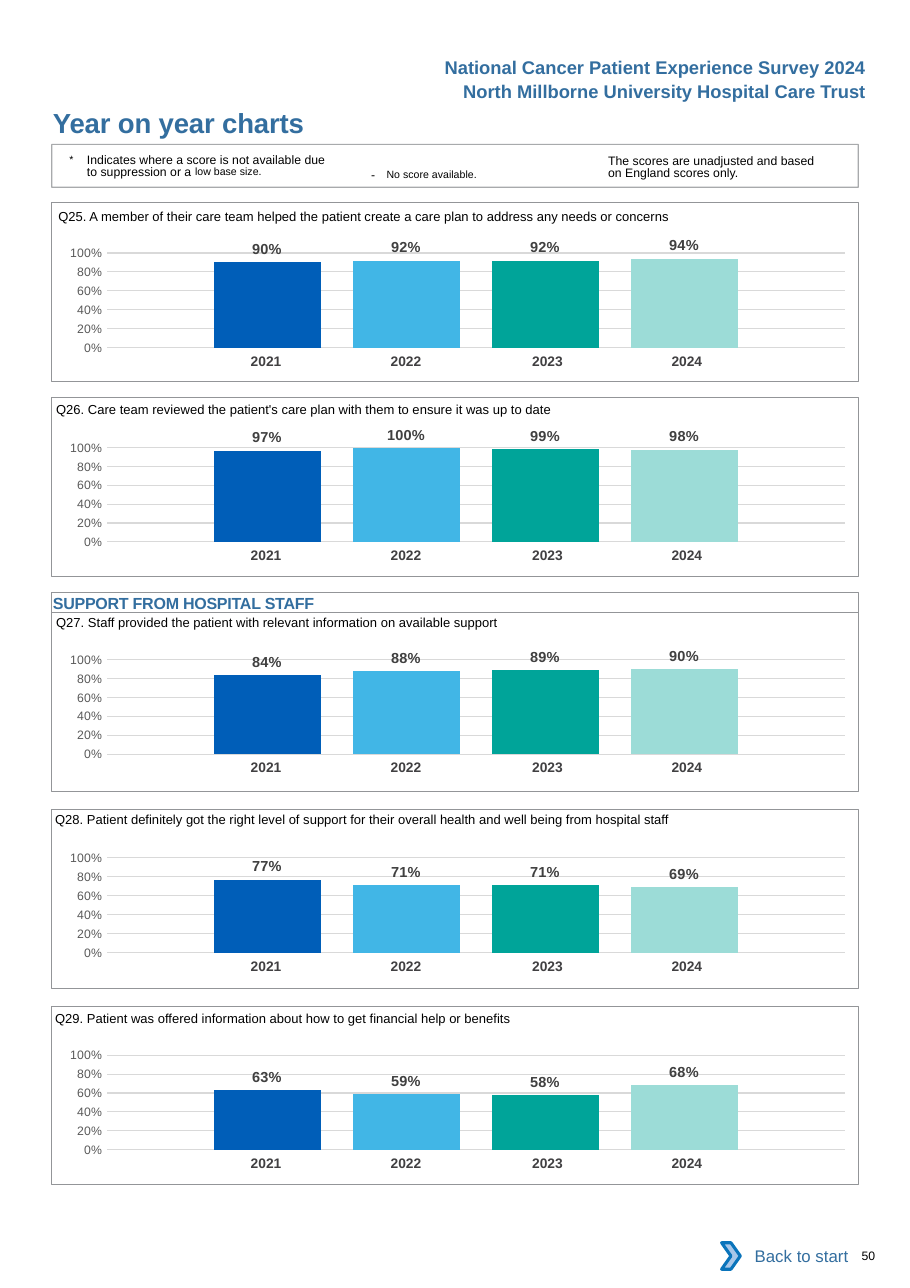
from dataclasses import dataclass

from lxml.etree import SubElement
from pptx import Presentation
from pptx.chart.data import CategoryChartData
from pptx.dml.color import RGBColor
from pptx.enum.chart import XL_CHART_TYPE, XL_LABEL_POSITION, XL_TICK_MARK
from pptx.enum.shapes import MSO_SHAPE
from pptx.enum.text import MSO_ANCHOR, PP_ALIGN
from pptx.oxml import parse_xml
from pptx.oxml.ns import nsdecls, qn
from pptx.util import Inches, Pt

COLORS = {
    "heading": "336E9F", "text": "000000", "frame": "939598", "year": "414042",
    "axis": "595959", "grid": "D9D9D9", "label": "404040", "white": "FFFFFF",
    "chevron": "A8C7E9", "chevron_line": "0A74BB",
}
YEARS = {"2021": "005EB8", "2022": "41B6E6", "2023": "00A499", "2024": "9CDCD7"}
YEAR_WIDTHS = (1.27, 1.27, 1.34, 1.27)
YEAR_RIGHT_MARGINS = (0, 0, 0.04, 0.12)
PLOT_AREA = {"x": 0.079, "y": 0.145, "w": 0.915, "h": 0.666}
NO_TABLE_STYLE = "{2D5ABB26-0587-4C30-8999-92F81FD0307C}"
LEFT, WIDTH = 0.47, 7.32
PANEL_HEIGHT = 1.62


@dataclass
class Panel:
    question: str
    top: float
    question_left: float
    question_top: float
    chart_top: float
    scores: tuple


@dataclass
class Run:
    text: str
    size: float = 8
    baseline: int = 0


PANELS = [
    Panel("Q25. A member of their care team helped the patient create a care plan to address any needs or concerns",
          1.84, 0.53, 1.8, 2.11, (0.9, 0.92, 0.92, 0.94)),
    Panel("Q26. Care team reviewed the patient's care plan with them to ensure it was up to date",
          3.61, 0.51, 3.55, 3.87, (0.97, 1, 0.99, 0.98)),
    Panel("Q27. Staff provided the patient with relevant information on available support",
          5.56, 0.51, 5.49, 5.8, (0.84, 0.88, 0.89, 0.9)),
    Panel("Q28. Patient definitely got the right level of support for their overall health and well being from hospital staff",
          7.35, 0.5, 7.28, 7.6, (0.77, 0.71, 0.71, 0.69)),
    Panel("Q29. Patient was offered information about how to get financial help or benefits",
          9.13, 0.5, 9.08, 9.39, (0.63, 0.59, 0.58, 0.68)),
]


def color(name: str) -> RGBColor:
    return RGBColor.from_string(COLORS.get(name, name))


def style_font(font, size: float, fill: str, bold: bool = False) -> None:
    font.name, font.size, font.bold = "Arial", Pt(size), bold
    font.color.rgb = color(fill)


def write(sp, runs, size=8.5, fill="text", bold=False, align=PP_ALIGN.LEFT,
          margins=(0, 0, 0, 0), spacing=0, hanging=0, anchor=MSO_ANCHOR.TOP):
    tf = sp.text_frame
    tf.word_wrap, tf.vertical_anchor = True, anchor
    tf.margin_left, tf.margin_top, tf.margin_right, tf.margin_bottom = map(Inches, margins)
    p = tf.paragraphs[0]
    p.alignment = align
    style_font(p.font, size, fill, bold)
    if hanging:
        pPr = p._p.get_or_add_pPr()
        pPr.set("marL", str(Inches(hanging)))
        pPr.set("indent", str(-Inches(hanging)))
    for run in [Run(runs, size)] if isinstance(runs, str) else runs:
        r = p.add_run()
        r.text = run.text
        if run.size != size:
            r.font.size = Pt(run.size)
        if run.baseline:
            r.font._element.set("baseline", str(run.baseline * 1000))
        if spacing:
            r.font._element.set("spc", str(spacing))
    return p


def add_text(s, box: tuple, runs, **style):
    return write(s.shapes.add_textbox(*map(Inches, box)), runs, **style)


def add_box(s, box: tuple, line="", width=0.5, fill="", shape=MSO_SHAPE.RECTANGLE):
    sp = s.shapes.add_shape(shape, *map(Inches, box))
    sp.shadow.inherit = False
    if fill:
        sp.fill.solid()
        sp.fill.fore_color.rgb = color(fill)
    else:
        sp.fill.background()
    if line:
        sp.line.color.rgb = color(line)
        sp.line.width = Pt(width)
    else:
        sp.line.fill.background()
    return sp


def add_score_chart(s, panel: Panel) -> None:
    data = CategoryChartData(number_format="0%")
    data.categories = ["1"]
    for i, score in enumerate(panel.scores, 1):
        data.add_series(f"Series {i}", [score])
    box = map(Inches, (0.39, panel.chart_top, WIDTH, 1.29))
    chart = s.shapes.add_chart(XL_CHART_TYPE.COLUMN_CLUSTERED, *box, data).chart
    chart.has_legend = chart.has_title = False
    chart.font.name, chart.font.size = "Calibri", Pt(10)
    chart.category_axis.visible = False
    axis = chart.value_axis
    axis.minimum_scale, axis.maximum_scale, axis.major_unit = 0, 1, 0.2
    axis.major_tick_mark = axis.minor_tick_mark = XL_TICK_MARK.NONE
    axis.format.line.fill.background()
    axis.major_gridlines.format.line.color.rgb = color("grid")
    axis.major_gridlines.format.line.width = Pt(0.75)
    axis.tick_labels.number_format = "0%"
    axis.tick_labels.number_format_is_linked = False
    style_font(axis.tick_labels.font, 8, "axis")
    plot = chart.plots[0]
    plot.vary_by_categories, plot.gap_width, plot.overlap = False, 200, -30
    for series, fill in zip(plot.series, YEARS.values()):
        series.format.fill.solid()
        series.format.fill.fore_color.rgb = color(fill)
        labels = series.data_labels
        labels.show_value, labels.position = True, XL_LABEL_POSITION.OUTSIDE_END
        labels.number_format, labels.number_format_is_linked = "0%", False
        style_font(labels.font, 9.5, "label", True)
    area = chart._chartSpace.xpath("c:chart/c:plotArea")[0]
    for layout in area.findall(qn("c:layout")):
        area.remove(layout)
    modes = '<c:layoutTarget val="inner"/><c:xMode val="edge"/><c:yMode val="edge"/>'
    sizes = "".join(f'<c:{k} val="{v}"/>' for k, v in PLOT_AREA.items())
    area.insert(0, parse_xml(
        f'<c:layout {nsdecls("c")}><c:manualLayout>{modes}{sizes}</c:manualLayout></c:layout>'))


def add_years(s, top: float) -> None:
    box = map(Inches, (1.73, top, sum(YEAR_WIDTHS), 0.27))
    frame = s.shapes.add_table(1, len(YEARS), *box)
    table = frame.table
    table.first_row = table.horz_banding = False
    frame._element.xpath(".//a:tableStyleId")[0].text = NO_TABLE_STYLE
    for i, year in enumerate(YEARS):
        table.columns[i].width = Inches(YEAR_WIDTHS[i])
        cell = table.cell(0, i)
        cell.fill.background()
        cell.margin_left, cell.margin_right = Inches(0.1), Inches(YEAR_RIGHT_MARGINS[i])
        p = cell.text_frame.paragraphs[0]
        p.text, p.alignment = year, PP_ALIGN.CENTER
        style_font(p.font, 9, "year", True)


def add_panel(s, panel: Panel) -> None:
    add_score_chart(s, panel)
    add_years(s, panel.chart_top + 1.05)
    add_box(s, (LEFT, panel.top, WIDTH, PANEL_HEIGHT), "frame")
    add_text(s, (panel.question_left, panel.question_top, 7.2, 0.24), panel.question,
             margins=(0, 0.09, 0, 0))


def add_legend(s) -> None:
    frame = add_box(s, (LEFT, 1.31, WIDTH, 0.39), "frame", 0.75)
    line_color = frame.line._ln.xpath("a:solidFill/a:srgbClr")[0]
    SubElement(line_color, qn("a:alpha")).set("val", "80000")
    note = [Run("*\t", 12, 3), Run("Indicates where a score is not available due to suppression or a "),
            Run("low base size.", 12, 7)]
    p = add_text(s, (0.63, 1.38, 2.4, 0.27), note, size=8, margins=(0, 0.03, 0, 0), hanging=0.16)
    p.line_spacing = Pt(8.1)
    add_text(s, (3.27, 1.41, 1.83, 0.24), [Run("-\t"), Run("No score available.", 12, 3)],
             size=8, margins=(0.1, 0.05, 0.1, 0.05), hanging=0.14)
    p = add_text(s, (5.52, 1.38, 2.01, 0.27),
                 "The scores are unadjusted and based on England scores only.",
                 size=8, margins=(0, 0.03, 0, 0))
    p.line_spacing = Pt(8.1)


def main() -> None:
    prs = Presentation()
    prs.slide_width, prs.slide_height = Inches(8.26), Inches(11.69)
    s = prs.slides.add_slide(prs.slide_layouts[5])
    title = s.shapes.title
    title.left, title.top, title.width, title.height = map(Inches, (0.48, 0.96, 4.5, 0.3))
    write(title, "Year on year charts", size=18, fill="heading", bold=True, spacing=-10)
    headers = {0.46: "National Cancer Patient Experience Survey 2024",
               0.68: "North Millborne University Hospital Care Trust"}
    for top, text in headers.items():
        add_text(s, (3.46, top, 4.5, 0.3), text, size=12, fill="heading", bold=True,
                 align=PP_ALIGN.RIGHT, margins=(0.1, 0.05, 0.1, 0.05))
    add_legend(s)
    for panel in PANELS:
        add_panel(s, panel)
    section = add_box(s, (LEFT, 5.38, WIDTH, 0.18), "frame")
    write(section, "SUPPORT FROM HOSPITAL STAFF", size=10.5, fill="heading", bold=True,
          margins=(0.01, 0.01, 0, 0), spacing=-15)
    back = add_box(s, (6.62, 11.19, 1.18, 0.42), fill="white")
    write(back, "Back to start", size=11, fill="heading", align=PP_ALIGN.RIGHT,
          margins=(0.1, 0.05, 0.1, 0.05), anchor=MSO_ANCHOR.MIDDLE)
    add_box(s, (6.55, 11.28, 0.17, 0.24), "chevron_line", 2, "chevron", MSO_SHAPE.CHEVRON)
    add_text(s, (7.82, 11.33, 0.41, 0.13), "50", size=8)
    prs.save("out.pptx")


if __name__ == "__main__":
    main()
